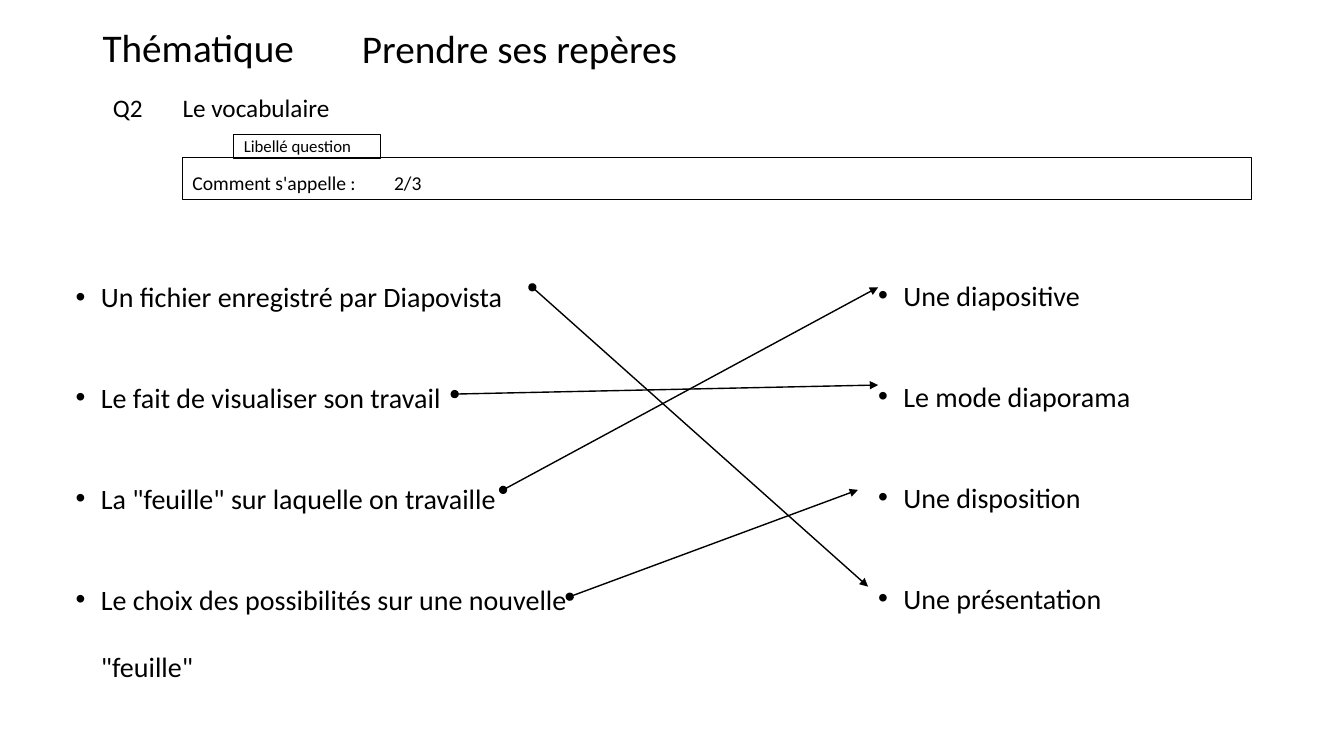
"""Build a vocabulary matching slide with two lists joined by arrows."""
from dataclasses import dataclass
from typing import Any, Optional

import lxml.etree
import pptx
import pptx.dml.color
import pptx.enum.shapes
import pptx.enum.text
import pptx.oxml.ns
import pptx.util

COLOURS = {"ink": "000000", "paper": "FFFFFF"}
FONT = "Calibri"
WIDTH = pptx.util.Inches(13.33)
HEIGHT = pptx.util.Inches(7.5)
INDENT = pptx.util.Inches(0.25)
COMPARISON_LAYOUT = 4
ANCHOR = pptx.enum.text.MSO_ANCHOR


@dataclass(frozen=True)
class Block:
    """Text with its place in percent of the slide's width and height."""
    place: tuple[float, float, float, float]
    lines: tuple[str, ...]
    size: int
    anchor: Any = ANCHOR.MIDDLE
    placeholder: Optional[int] = None
    framed: bool = False
    fill: Optional[str] = None
    bulleted: bool = False
    line_spacing: float = 0.9
    space_before: int = 0
    top_inset: float = 0.05


@dataclass(frozen=True)
class Match:
    """An arrow from a definition to its term, in percent of the slide."""
    start: tuple[float, float]
    end: tuple[float, float]


DEFINITIONS = (
    "Un fichier enregistré par Diapovista",
    "Le fait de visualiser son travail",
    'La "feuille" sur laquelle on travaille',
    'Le choix des possibilités sur une nouvelle "feuille"',
)
TERMS = ("Une diapositive", "Le mode diaporama", "Une disposition", "Une présentation")
LIST_FORMAT = {"size": 20, "anchor": ANCHOR.TOP, "bulleted": True,
               "line_spacing": 2.0, "space_before": 24}

BLOCKS = (
    Block((6.9, 2.4, 17.03, 7.6), ("Thématique",), 28, line_spacing=1.0),
    Block((17.4, 17.73, 10.95, 3.2), ("Libellé question",), 12, ANCHOR.TOP,
          framed=True, fill="paper", line_spacing=1.0, top_inset=0.02),
    Block((13.58, 20.8, 79.52, 5.6), ("Comment s'appelle :\t2/3",), 14,
          ANCHOR.BOTTOM, framed=True),
    Block((26.18, 1.87, 66.99, 9.73), ("Prendre ses repères",), 28, placeholder=0),
    Block((7.65, 11.6, 5.1, 5.6), ("Q2",), 18, placeholder=1),
    Block((12.83, 11.6, 80.35, 5.6), ("Le vocabulaire",), 18, placeholder=3),
    Block((4.88, 31.87, 39.38, 63.33), DEFINITIONS, placeholder=2, **LIST_FORMAT),
    Block((64.59, 31.73, 32.56, 63.47), TERMS, placeholder=4, **LIST_FORMAT),
)
MATCHES = (
    Match((39.61, 38), (64.59, 77.6)),
    Match((33.83, 52.13), (65.34, 50.93)),
    Match((37.43, 64.8), (65.34, 38)),
    Match((42.39, 78.93), (63.84, 64.8)),
)


def across(percent: float) -> int:
    return round(WIDTH * percent / 100)


def down(percent: float) -> int:
    return round(HEIGHT * percent / 100)


def colour(name: str) -> pptx.dml.color.RGBColor:
    return pptx.dml.color.RGBColor.from_string(COLOURS[name])


def apply(target: Any, values: dict[str, Any]) -> None:
    for name, value in values.items():
        setattr(target, name, value)


def add_element(parent: Any, tag: str, **attributes: str) -> None:
    lxml.etree.SubElement(parent, pptx.oxml.ns.qn(tag), attributes)


def draw_outline(line: Any, points: float) -> None:
    line.color.rgb = colour("ink")
    line.width = pptx.util.Pt(points)


def make_box(page: Any, block: Block) -> Any:
    left, top, width, height = block.place
    place = {"left": across(left), "top": down(top),
             "width": across(width), "height": down(height)}
    if block.placeholder is not None:
        box = page.placeholders[block.placeholder]
        apply(box, place)
    elif block.framed:
        box = page.shapes.add_shape(
            pptx.enum.shapes.MSO_SHAPE.RECTANGLE, *place.values())
        box.shadow.inherit = False
        draw_outline(box.line, 0.75)
        if block.fill:
            box.fill.solid()
            box.fill.fore_color.rgb = colour(block.fill)
        else:
            box.fill.background()
    else:
        box = page.shapes.add_textbox(*place.values())
    return box


def draw_block(page: Any, block: Block) -> None:
    frame = make_box(page, block).text_frame
    frame.text = "\n".join(block.lines)
    apply(frame, {
        "word_wrap": True,
        "auto_size": pptx.enum.text.MSO_AUTO_SIZE.NONE,
        "vertical_anchor": block.anchor,
        "margin_left": pptx.util.Inches(0.1),
        "margin_right": pptx.util.Inches(0.1),
        "margin_top": pptx.util.Inches(block.top_inset),
        "margin_bottom": pptx.util.Inches(0.05),
    })
    for para in frame.paragraphs:
        apply(para, {
            "alignment": pptx.enum.text.PP_ALIGN.LEFT,
            "line_spacing": block.line_spacing,
            "space_before": pptx.util.Pt(block.space_before),
        })
        if block.bulleted:
            properties = para._p.get_or_add_pPr()
            properties.set("marL", str(INDENT))
            properties.set("indent", str(-INDENT))
            add_element(properties, "a:buFont", typeface="Arial")
            add_element(properties, "a:buChar", char="•")
        for span in para.runs:
            apply(span.font, {"name": FONT, "size": pptx.util.Pt(block.size), "bold": False})
            span.font.color.rgb = colour("ink")


def draw_match(page: Any, match: Match) -> None:
    arrow = page.shapes.add_connector(
        pptx.enum.shapes.MSO_CONNECTOR.STRAIGHT,
        across(match.start[0]), down(match.start[1]),
        across(match.end[0]), down(match.end[1]))
    draw_outline(arrow.line, 1)
    outline = arrow.line._get_or_add_ln()
    add_element(outline, "a:headEnd", type="oval")
    add_element(outline, "a:tailEnd", type="triangle")
    add_element(arrow._element.spPr, "a:effectLst")


def main() -> None:
    deck = pptx.Presentation()
    apply(deck, {"slide_width": WIDTH, "slide_height": HEIGHT})
    page = deck.slides.add_slide(deck.slide_layouts[COMPARISON_LAYOUT])
    for block in BLOCKS:
        draw_block(page, block)
    for match in MATCHES:
        draw_match(page, match)
    deck.save("out.pptx")


if __name__ == "__main__":
    main()
